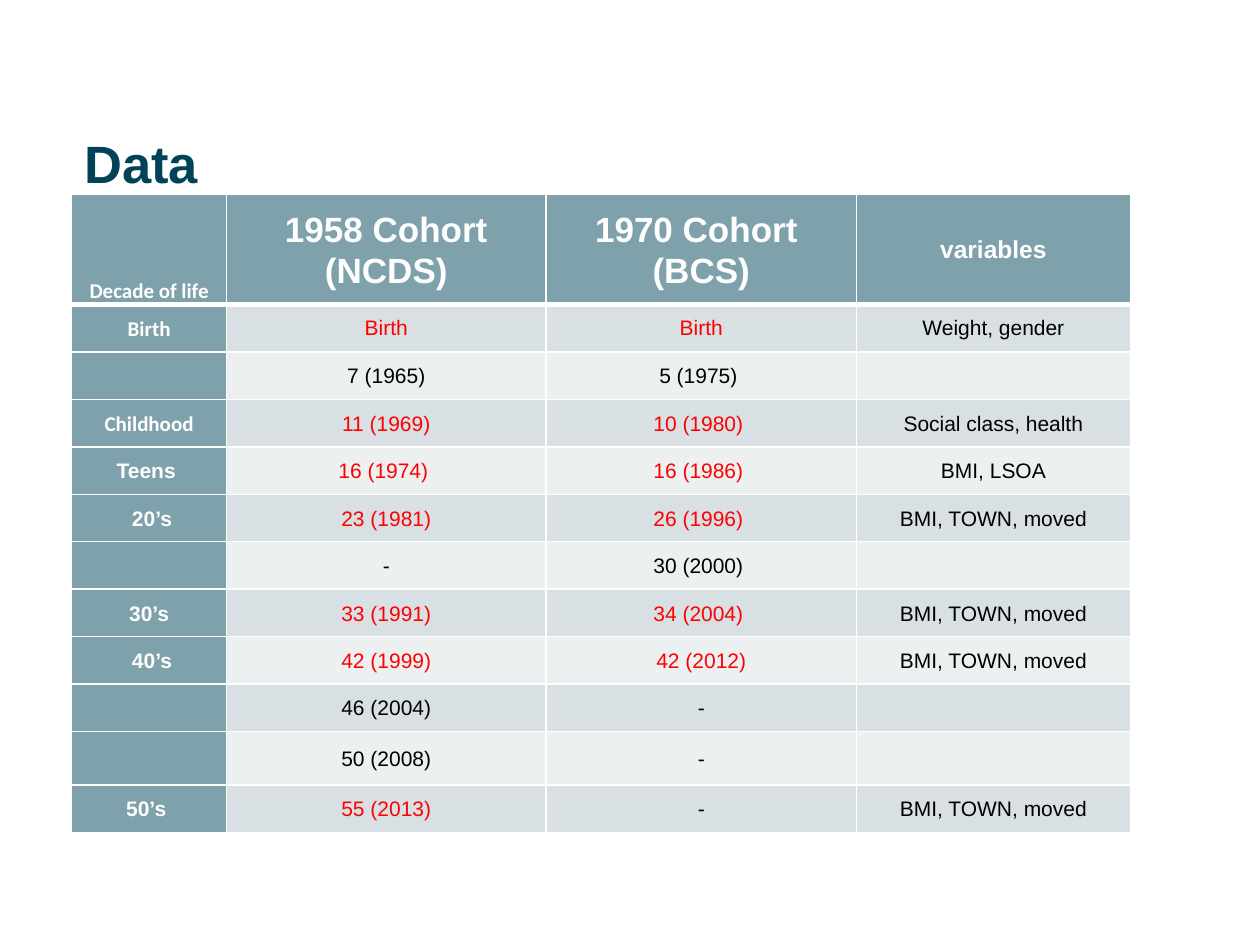
import dataclasses

import lxml.etree
import pptx
import pptx.dml.color
import pptx.enum.text
import pptx.oxml.ns
import pptx.table
import pptx.util

Pt = pptx.util.Pt
Anchor = pptx.enum.text.MSO_ANCHOR
Align = pptx.enum.text.PP_ALIGN

WHITE, BLACK, RED = "FFFFFF", "000000", "FF0000"
TEAL, NAVY = "7FA1AC", "004359"
BANDS = ("D8E0E3", "ECF0F1")
COLUMN_WIDTHS = (88.5, 182.5, 177.5, 156.5)
HEADER_HEIGHT, ROW_HEIGHT, TALL_ROW_HEIGHT = 63.2, 27.1, 30.6
TALL_ROW = 10
LEFT, TABLE_TOP = 41, 110.9


@dataclasses.dataclass
class Sweep:
    decade: str
    ncds: str
    bcs: str
    variables: str = ""
    ncds_color: str = RED
    bcs_color: str = RED
    decade_font: str = "Arial"
    spacing: float = 1.07


FOLLOW_UP = "BMI, TOWN, moved"
SWEEPS = (
    Sweep("Birth", "Birth", "Birth", "Weight, gender", decade_font="Calibri", spacing=1.0),
    Sweep("", "7 (1965)", "5 (1975) ", "", BLACK, BLACK, spacing=1.0),
    Sweep("Childhood", "11 (1969)", "10 (1980) ", "Social class, health", decade_font="Calibri"),
    Sweep("Teens ", "16 (1974) ", "16 (1986) ", "BMI, LSOA"),
    Sweep(" 20’s", "23 (1981)", "26 (1996) ", FOLLOW_UP),
    Sweep("", "-", "30 (2000) ", "", BLACK, BLACK),
    Sweep("30’s", "33 (1991)", "34 (2004) ", FOLLOW_UP),
    Sweep(" 40’s", "42 (1999)", "42 (2012)", FOLLOW_UP),
    Sweep("", "46 (2004)", "-", "", BLACK, BLACK),
    Sweep("", "50 (2008)", "-", "", BLACK, BLACK),
    Sweep("50’s ", "55 (2013)", "-", FOLLOW_UP, bcs_color=BLACK),
)


def rgb(value: str) -> pptx.dml.color.RGBColor:
    return pptx.dml.color.RGBColor.from_string(value)


def write_text(frame, text: str, *, size: float = 12, font: str = "Arial",
               color: str = BLACK, bold: bool = False, align=Align.CENTER,
               spacing: float = 1.07) -> None:
    for index, line in enumerate(text.split("\n")):
        para = frame.add_paragraph() if index else frame.paragraphs[0]
        para.alignment = align
        para.line_spacing = spacing
        if line:
            span = para.add_run()
            span.text = line
            span.font.size = Pt(size)
            span.font.name = font
            span.font.bold = bold
            span.font.color.rgb = rgb(color)


def set_borders(cell: pptx.table._Cell, top: float = 1, bottom: float = 1) -> None:
    properties = cell._tc.get_or_add_tcPr()
    qn = pptx.oxml.ns.qn
    sides = (("a:lnL", 1), ("a:lnR", 1), ("a:lnT", top), ("a:lnB", bottom))
    for index, (side, width) in enumerate(sides):
        line = lxml.etree.Element(qn(side), w=str(Pt(width)))
        fill = lxml.etree.SubElement(line, qn("a:solidFill"))
        lxml.etree.SubElement(fill, qn("a:srgbClr"), val=WHITE)
        properties.insert(index, line)


def fill_cell(cell: pptx.table._Cell, text: str, fill: str, *, anchor=Anchor.MIDDLE,
              top: float = 1, bottom: float = 1, **text_format) -> None:
    cell.fill.solid()
    cell.fill.fore_color.rgb = rgb(fill)
    cell.margin_left = cell.margin_right = Pt(5)
    cell.margin_top = cell.margin_bottom = 0
    cell.vertical_anchor = anchor
    set_borders(cell, top, bottom)
    write_text(cell.text_frame, text, **text_format)


def add_title(page) -> None:
    title = page.shapes.title
    title.left, title.top, title.width, title.height = Pt(LEFT), Pt(69), Pt(668), Pt(60.5)
    title.text_frame.vertical_anchor = Anchor.TOP
    title.text_frame.margin_top = Pt(6)
    write_text(title.text_frame, "Data", size=30, color=NAVY, bold=True,
               align=Align.LEFT, spacing=1.0)


def add_cohort_table(page) -> None:
    heights = [HEADER_HEIGHT] + [ROW_HEIGHT] * len(SWEEPS)
    heights[TALL_ROW] = TALL_ROW_HEIGHT
    table = page.shapes.add_table(len(heights), len(COLUMN_WIDTHS), Pt(LEFT), Pt(TABLE_TOP),
                                  Pt(sum(COLUMN_WIDTHS)), Pt(sum(heights))).table
    table.first_col = True
    for column, width in zip(table.columns, COLUMN_WIDTHS):
        column.width = Pt(width)
    for row, height in zip(table.rows, heights):
        row.height = Pt(height)

    headings = (
        ("Decade of life", 12, "Calibri", Anchor.BOTTOM),
        ("1958 Cohort\n(NCDS)", 20, "Arial", Anchor.MIDDLE),
        ("1970 Cohort \n(BCS)", 20, "Arial", Anchor.MIDDLE),
        ("variables", 14, "Arial", Anchor.MIDDLE),
    )
    for column, (text, size, font, anchor) in enumerate(headings):
        fill_cell(table.cell(0, column), text, TEAL, anchor=anchor, bottom=3,
                  size=size, font=font, color=WHITE, bold=True)

    for row, sweep in enumerate(SWEEPS, start=1):
        top = 3 if row == 1 else 1
        fill_cell(table.cell(row, 0), sweep.decade, TEAL, top=top, font=sweep.decade_font,
                  color=WHITE, bold=True, spacing=1.07 if row > 2 else 1.07)
        entries = ((sweep.ncds, sweep.ncds_color), (sweep.bcs, sweep.bcs_color),
                   (sweep.variables, BLACK))
        for column, (text, color) in enumerate(entries, start=1):
            fill_cell(table.cell(row, column), text, BANDS[(row - 1) % 2], top=top,
                      color=color, spacing=sweep.spacing)


def main() -> None:
    deck = pptx.Presentation()
    deck.slide_width, deck.slide_height = Pt(720), Pt(540)
    page = deck.slides.add_slide(deck.slide_layouts[5])
    add_title(page)
    add_cohort_table(page)
    deck.save("out.pptx")


if __name__ == "__main__":
    main()
